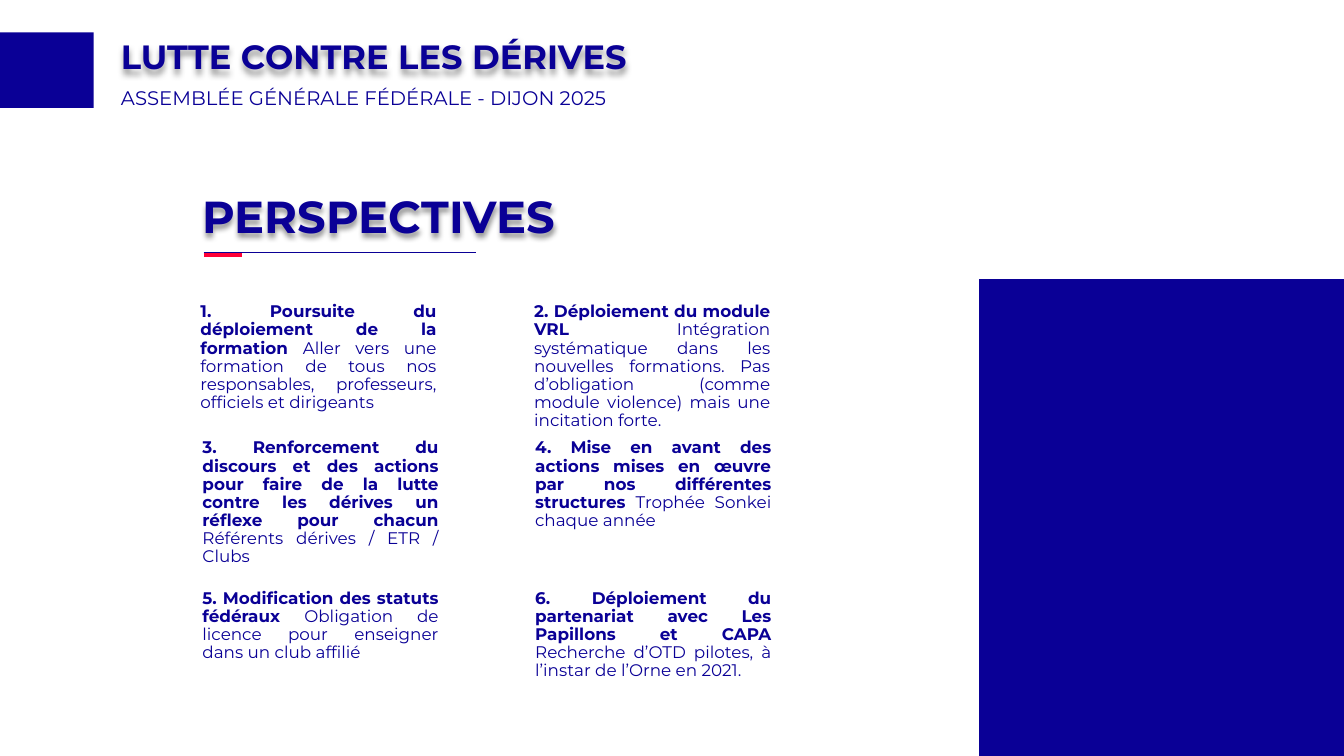
from lxml.etree import SubElement
from pptx import Presentation
from pptx.dml.color import RGBColor
from pptx.enum.shapes import MSO_CONNECTOR as Connector, MSO_SHAPE as Shape
from pptx.enum.text import MSO_ANCHOR as Anchor, MSO_AUTO_SIZE as AutoSize, PP_ALIGN as Align
from pptx.oxml.ns import qn
from pptx.util import Inches, Pt

NAVY = "0A0096"
RED = "FF0037"
BLACK = "000000"
FONT = "Montserrat"

PERSPECTIVES = [
    (1.89, 2.96, "1. Poursuite du déploiement de la formation ",
     "Aller vers une formation de tous nos responsables, professeurs, officiels et dirigeants"),
    (5.2, 2.96, "2. Déploiement du module VRL ",
     "Intégration systématique dans les nouvelles formations. Pas d’obligation "
     "(comme module violence) mais une incitation forte."),
    (1.91, 4.31, "3. Renforcement du discours et des actions pour faire de la lutte "
     "contre les dérives un réflexe pour chacun ",
     "Référents dérives / ETR / Clubs"),
    (5.21, 4.31, "4. Mise en avant des actions mises en œuvre par nos différentes structures ",
     "Trophée Sonkei chaque année"),
    (1.91, 5.8, "5. Modification des statuts fédéraux ",
     "Obligation de licence pour enseigner dans un club affilié"),
    (5.21, 5.8, "6. Déploiement du partenariat avec Les Papillons et CAPA ",
     "Recherche d’OTD pilotes, à l’instar de l’Orne en 2021."),
]


def color(value):
    """Return the colour for a hex string."""
    return RGBColor.from_string(value)


def set_attributes(target, values):
    """Set each attribute of the target from a dict."""
    for name, value in values.items():
        setattr(target, name, value)


def place(shape, left, top, width, height):
    """Move and size a shape, in inches."""
    set_attributes(shape, {"left": Inches(left), "top": Inches(top),
                           "width": Inches(width), "height": Inches(height)})


def write_text(shape, runs, size, align=Align.LEFT):
    """Write one paragraph of (text, bold) runs."""
    frame = shape.text_frame
    set_attributes(frame, {
        "word_wrap": True, "auto_size": AutoSize.NONE, "vertical_anchor": Anchor.TOP,
        "margin_left": Inches(0.1), "margin_right": Inches(0.1),
        "margin_top": Inches(0.05), "margin_bottom": Inches(0.05)})
    paragraph = frame.paragraphs[0]
    set_attributes(paragraph, {"alignment": align, "line_spacing": 0.9, "space_before": Pt(0)})
    for text, bold in runs:
        run = paragraph.add_run()
        run.text = text
        set_attributes(run.font, {"name": FONT, "size": Pt(size), "bold": bold})
        run.font.color.rgb = color(NAVY)


def add_text_shadow(shape):
    """Cast a soft shadow below the text of an unfilled shape."""
    effects = shape._element.spPr.get_or_add_effectLst()
    shadow = SubElement(effects, qn("a:outerShdw"), blurRad="50800", dist="38100",
                        dir="5400000", algn="t", rotWithShape="0")
    black = SubElement(shadow, qn("a:srgbClr"), val=BLACK)
    SubElement(black, qn("a:alpha"), val="40000")


def add_block(slide, left, top, width, height):
    """Add a plain navy rectangle."""
    block = slide.shapes.add_shape(Shape.RECTANGLE, Inches(left), Inches(top),
                                   Inches(width), Inches(height))
    block.shadow.inherit = False
    block.fill.solid()
    block.fill.fore_color.rgb = color(NAVY)
    block.line.fill.background()


def add_rule(slide, left, top, length, line_color, weight):
    """Add a horizontal line."""
    rule = slide.shapes.add_connector(Connector.STRAIGHT, Inches(left), Inches(top),
                                      Inches(left + length), Inches(top))
    rule.line.color.rgb = color(line_color)
    rule.line.width = Pt(weight)
    SubElement(rule._element.spPr, qn("a:effectLst"))


def add_header(slide, left, top, width):
    """Fill the slide title and the event line below it."""
    title, subtitle = slide.placeholders
    place(title, left, top, width, 0.37)
    write_text(title, [("LUTTE CONTRE LES DÉRIVES", True)], 24)
    add_text_shadow(title)
    place(subtitle, left, top + 0.48, width, 0.27)
    write_text(subtitle, [("ASSEMBLÉE GÉNÉRALE FÉDÉRALE - DIJON 2025", False)], 14)


def add_section_heading(slide, left, top, width, height):
    """Add the section heading with its two-colour underline."""
    heading = slide.shapes.add_textbox(Inches(left), Inches(top), Inches(width), Inches(height))
    write_text(heading, [("PERSPECTIVES", True)], 32)
    add_text_shadow(heading)
    add_rule(slide, left + 0.11, top + 0.62, 2.7, NAVY, 0.5)
    add_rule(slide, left + 0.11, top + 0.65, 0.38, RED, 3)


def add_perspective(slide, left, top, heading, detail):
    """Add one numbered perspective with its detail."""
    box = slide.shapes.add_textbox(Inches(left), Inches(top), Inches(2.54), Inches(0.59))
    write_text(box, [(heading, True), (detail, False)], 12, Align.JUSTIFY)


def main():
    """Build and save the slide."""
    presentation = Presentation()
    presentation.slide_width = Inches(13.33)
    presentation.slide_height = Inches(7.5)
    slide = presentation.slides.add_slide(presentation.slide_layouts[0])
    add_block(slide, 9.71, 2.77, 3.62, 4.73)
    add_block(slide, 0, 0.32, 0.93, 0.75)
    add_header(slide, 1.1, 0.35, 8.75)
    add_section_heading(slide, 1.91, 1.88, 4.84, 0.72)
    for perspective in PERSPECTIVES:
        add_perspective(slide, *perspective)
    presentation.save("out.pptx")


if __name__ == "__main__":
    main()
